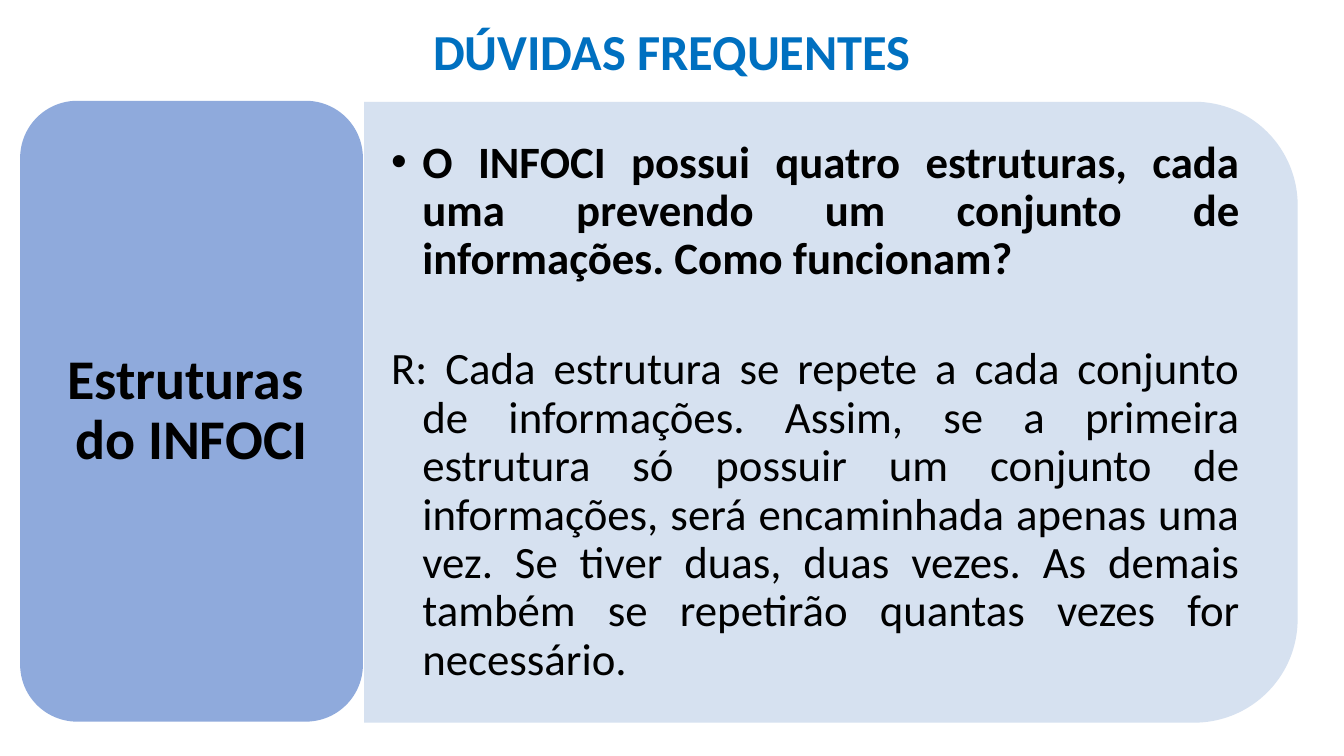
from lxml.etree import SubElement
from pptx import Presentation
from pptx.dml.color import RGBColor
from pptx.enum.shapes import MSO_SHAPE
from pptx.enum.text import MSO_ANCHOR, PP_ALIGN
from pptx.oxml.ns import qn
from pptx.util import Inches, Pt

COLORS = {"title": "0070C0", "topic": "8FAADC", "answer": "D2DEEF", "text": "000000"}

deck = Presentation()
deck.slide_width, deck.slide_height = Inches(13.33), Inches(7.5)
slide = deck.slides.add_slide(deck.slide_layouts[6])

# Two columns share one row below the title
row_top, row_height = 1.0, 6.16
topic_left, topic_width = 0.2, 3.4
answer_left, answer_width = 3.61, 9.26


def add_panel(preset, left, top, width, height, color):
    panel = slide.shapes.add_shape(preset, *map(Inches, (left, top, width, height)))
    panel.shadow.inherit = False
    panel.fill.solid()
    panel.fill.fore_color.rgb = RGBColor.from_string(COLORS[color])
    panel.line.fill.background()
    return panel


def add_text(area, margins, paragraphs, color, anchor):
    frame = slide.shapes.add_textbox(*map(Inches, area)).text_frame
    side, edge = map(Inches, margins)
    frame_format = {"word_wrap": True, "vertical_anchor": anchor,
                    "margin_left": side, "margin_right": side,
                    "margin_top": edge, "margin_bottom": edge}
    for name, value in frame_format.items():
        setattr(frame, name, value)
    for index, (wording, layout, size, bold) in enumerate(paragraphs):
        paragraph = frame.add_paragraph() if index else frame.paragraphs[0]
        paragraph.text = wording
        for name, value in layout.items():
            setattr(paragraph, name, value)
        font = paragraph.runs[0].font
        font.color.rgb = RGBColor.from_string(COLORS[color])
        for run in paragraph.runs:
            run_format = {"name": "Calibri", "size": Pt(size), "bold": bold}
            for name, value in run_format.items():
                setattr(run.font, name, value)
            run.font.color.rgb = RGBColor.from_string(COLORS[color])
    return frame


# Title
add_text((0.72, 0.15, 11.89, 0.71), (0.1, 0.05),
         [("DÚVIDAS FREQUENTES", {"alignment": PP_ALIGN.CENTER}, 36, True)],
         "title", MSO_ANCHOR.TOP)

# Answer panel: a quarter turn about its centre puts the round corners on the right
turn_shift = (answer_width - row_height) / 2
answer_panel = add_panel(MSO_SHAPE.ROUND_2_SAME_RECTANGLE, answer_left + turn_shift,
                         row_top + 0.01 - turn_shift, row_height, answer_width, "answer")
answer_panel.rotation = 90
panel_color = answer_panel.fill._xPr.find(qn("a:solidFill"))[0]
SubElement(panel_color, qn("a:alpha"), val="90000")

# Question and answer
justified = {"alignment": PP_ALIGN.JUSTIFY, "line_spacing": 0.9}
question = "O INFOCI possui quatro estruturas, cada uma prevendo um conjunto de informações. Como funcionam?"
answer = ("R: Cada estrutura se repete a cada conjunto de informações. Assim, se a primeira "
          "estrutura só possuir um conjunto de informações, será encaminhada apenas uma vez. "
          "Se tiver duas, duas vezes. As demais também se repetirão quantas vezes for necessário.")
answer_frame = add_text(
    (answer_left, 1.31, 8.96, 5.56), (0.27, 0.14),
    [(question, {**justified, "space_after": Pt(44)}, 32, True),
     (answer, {**justified, "space_after": Pt(5)}, 32, False)],
    "text", MSO_ANCHOR.MIDDLE)
for paragraph, bullet in zip(answer_frame.paragraphs, ("•", None)):
    properties = paragraph._p.get_or_add_pPr()
    properties.set("marL", str(Inches(0.31)))
    properties.set("indent", str(-Inches(0.31)))
    if bullet:
        SubElement(properties, qn("a:buFont"), typeface="Arial")
        SubElement(properties, qn("a:buChar"), char=bullet)
    else:
        SubElement(properties, qn("a:buNone"))

# Topic panel with its label
add_panel(MSO_SHAPE.ROUNDED_RECTANGLE, topic_left, row_top, topic_width, row_height, "topic")
inset = 0.17
add_text((topic_left + inset, row_top + inset, topic_width - 2 * inset, row_height - 2 * inset),
         (0.17, 0.08),
         [("Estruturas \vdo INFOCI",
           {"alignment": PP_ALIGN.CENTER, "line_spacing": 0.9, "space_after": Pt(14)}, 40, True)],
         "text", MSO_ANCHOR.MIDDLE)

deck.save("out.pptx")
